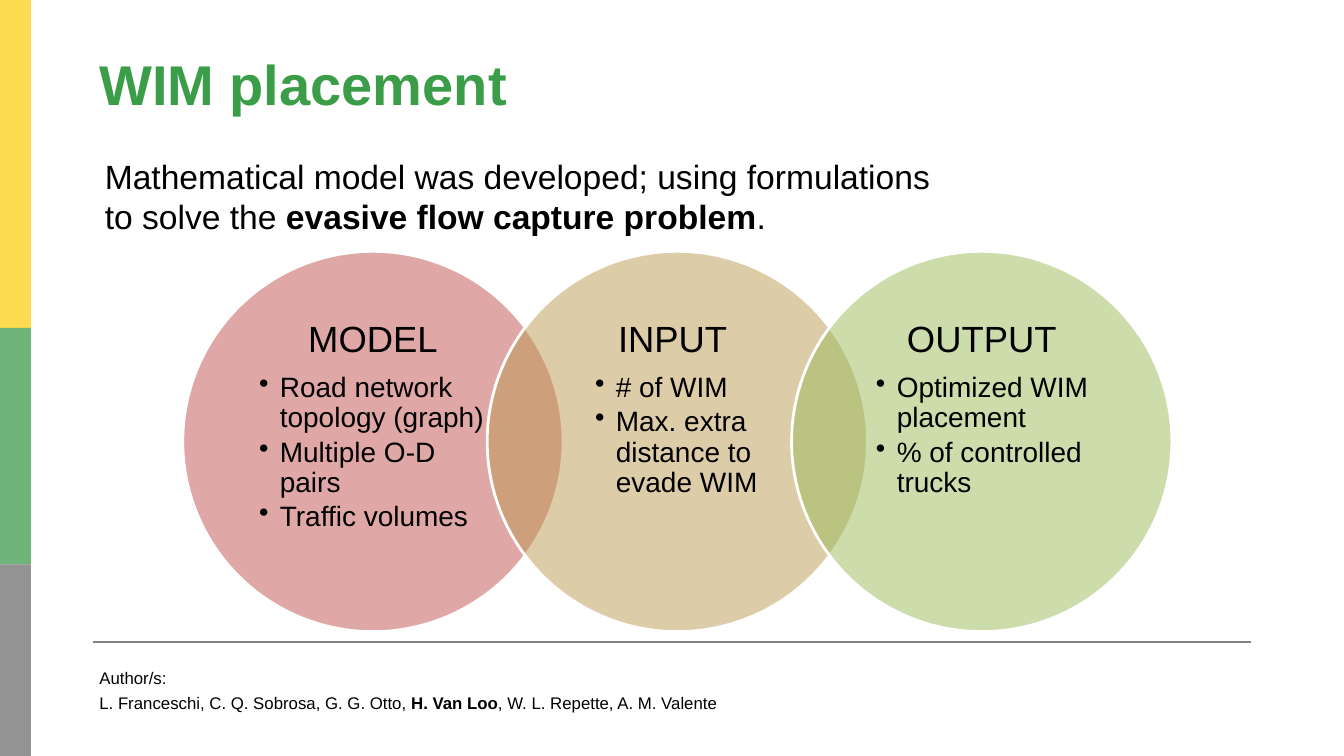
"""Build the WIM placement slide with three overlapping circles."""
from lxml import etree
from pptx import Presentation
from pptx import util as u
from pptx.dml.color import RGBColor
from pptx.enum import shapes, text
from pptx.oxml.ns import qn

COLORS = {"yellow": "FBCF16", "green": "409C4B", "gray": "707070", "title": "3B9D48",
          "rule": "808080", "black": "000000", "white": "FFFFFF",
          "red": "C0504D", "tan": "BD9B53", "lime": "9BBB59"}


def add_paint(kind, left, top, width, height, color, opacity):
    shape = page.shapes.add_shape(kind, u.Inches(left), u.Inches(top),
                                  u.Inches(width), u.Inches(height))
    shape.shadow.inherit = False
    shape.fill.solid()
    shape.fill.fore_color.rgb = RGBColor.from_string(COLORS[color])
    tint = shape.fill._xPr.find(qn("a:solidFill"))[0]
    etree.SubElement(tint, qn("a:alpha")).set("val", str(opacity * 1000))
    shape.line.fill.background()
    return shape


def add_text(place, paras, size, color="black", inset=(0.1, 0.05, 0.1, 0.05), before=0):
    box = page.shapes.add_textbox(*[u.Inches(value) for value in place])
    frame = box.text_frame
    frame.word_wrap = True
    frame.vertical_anchor = text.MSO_ANCHOR.TOP
    (frame.margin_left, frame.margin_top,
     frame.margin_right, frame.margin_bottom) = [u.Inches(value) for value in inset]
    for index, spans in enumerate(paras):
        para = frame.paragraphs[0] if index == 0 else frame.add_paragraph()
        para.space_before = u.Pt(before if index else 0)
        for words, bold in spans:
            span = para.add_run()
            span.text = words
            span.font.name = "Arial"
            span.font.size = u.Pt(size)
            span.font.bold = bold
            span.font.color.rgb = RGBColor.from_string(COLORS[color])
    return frame


deck = Presentation()
deck.slide_width, deck.slide_height = u.Inches(20), u.Inches(11.25)
page = deck.slides.add_slide(deck.slide_layouts[6])

edges = [0, 4.88, 8.4, 11.25]
for top, bottom, color in zip(edges, edges[1:], ["yellow", "green", "gray"]):
    add_paint(shapes.MSO_SHAPE.RECTANGLE, 0, top, 0.46, bottom - top, color, 75)

rule = page.shapes.add_connector(shapes.MSO_CONNECTOR.STRAIGHT, u.Inches(1.38),
                                 u.Inches(9.56), u.Inches(18.62), u.Inches(9.56))
rule.line.color.rgb = RGBColor.from_string(COLORS["rule"])
rule.line.width = u.Pt(2.25)
etree.SubElement(rule._element.spPr, qn("a:effectLst"))

add_text((1.38, 0.6, 13.66, 1.95), [[("WIM placement", True)]], 60, "title",
         (0.1, 0.13, 0.1, 0.05))
add_text((1.38, 9.89, 9.41, 1.09),
         [[("Author/s:", False)],
          [("L. Franceschi, C. Q. Sobrosa, G. G. Otto,", False), (" H. Van Loo", True),
           (", W. L. Repette, A. M. Valente", False)]], 18, before=4.5)
add_text((1.38, 2.08, 13.19, 1.6),
         [[("Mathematical model was developed; using formulations to solve the ", False),
           ("evasive flow capture problem", True), (".", False)]], 36,
         inset=(0.18, 0.24, 0.3, 0.05))

circles = [
    ("MODEL", "red", 0.31,
     ["Road network topology (graph)", "Multiple O-D pairs", "Traffic volumes"]),
    ("INPUT ", "tan", 0.78, ["# of WIM", "Max. extra distance to evade WIM"]),
    ("OUTPUT", "lime", 0.43, ["Optimized WIM placement", "% of controlled trucks"]),
]
for index, (heading, color, indent, points) in enumerate(circles):
    left = 2.72 + 4.53 * index
    circle = add_paint(shapes.MSO_SHAPE.OVAL, left, 3.74, 5.66, 5.66, color, 50)
    circle.line.color.rgb = RGBColor.from_string(COLORS["white"])
    circle.line.width = u.Pt(3)
    frame = add_text((left + 0.825, 4.73, 4.01, 3.85),
                     [[(words, False)] for words in [heading] + points], 30,
                     inset=(0.31, 0.05, 0.31, 0.05))
    title, *bullets = frame.paragraphs
    title.alignment = text.PP_ALIGN.CENTER
    title.line_spacing = 0.9
    title.space_after = u.Pt(13.65)
    title.runs[0].font.size = u.Pt(39)
    for para in bullets:
        para.line_spacing = 0.9
        para.space_after = u.Pt(4.5)
        layout = para._p.get_or_add_pPr()
        layout.set("marL", str(u.Inches(indent)))
        layout.set("indent", str(u.Inches(-0.31)))
        etree.SubElement(layout, qn("a:buChar")).set("char", "•")

deck.save("out.pptx")
